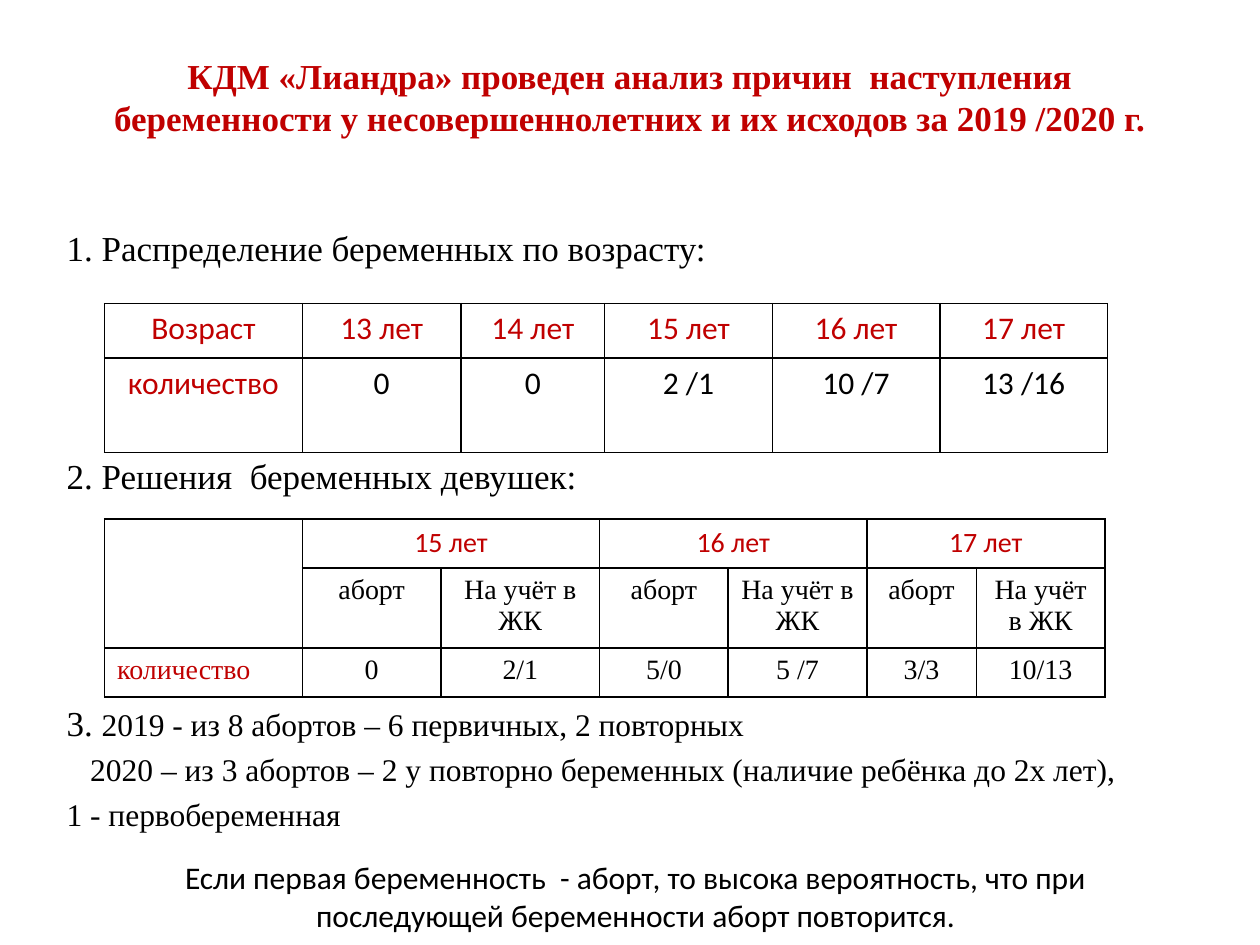
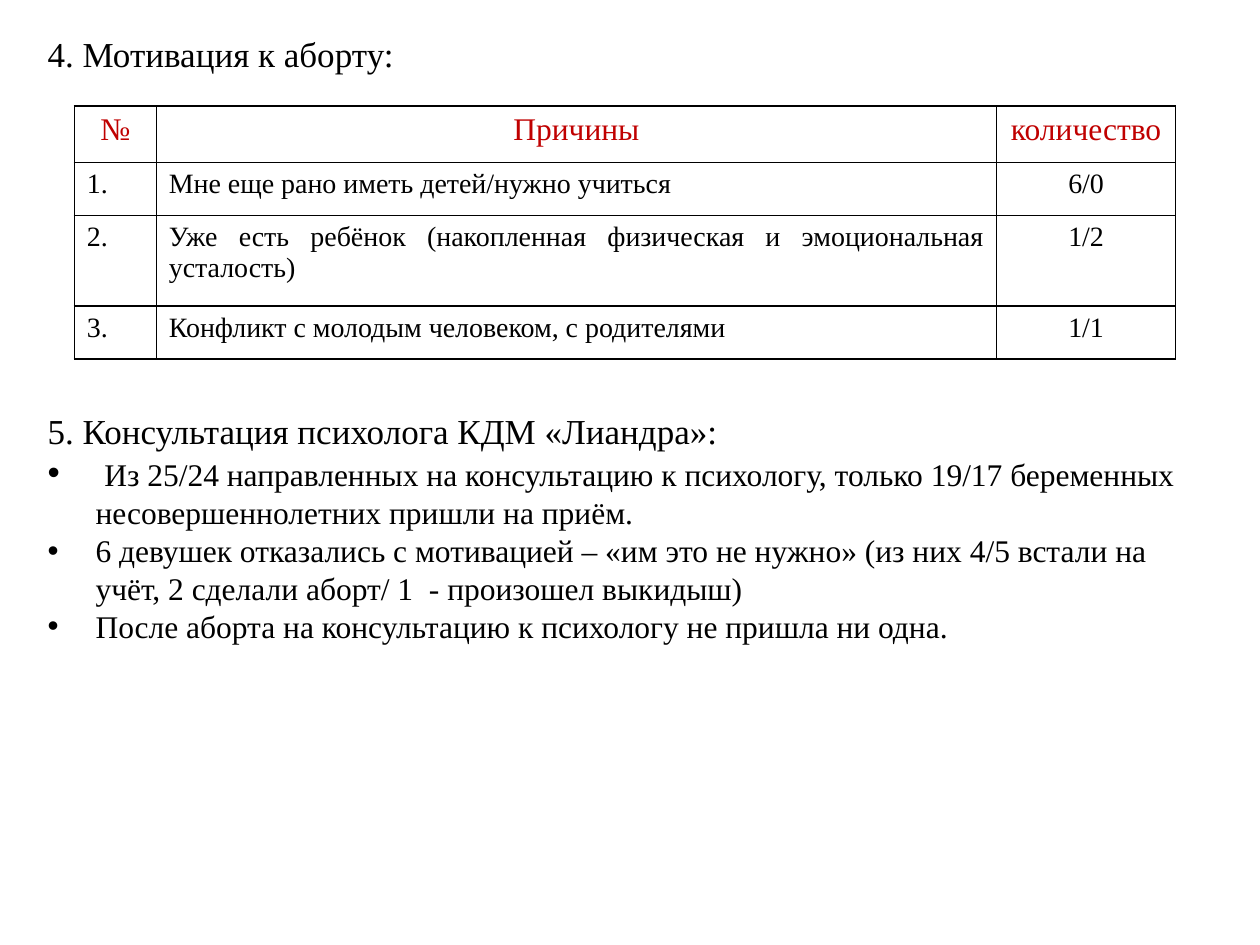
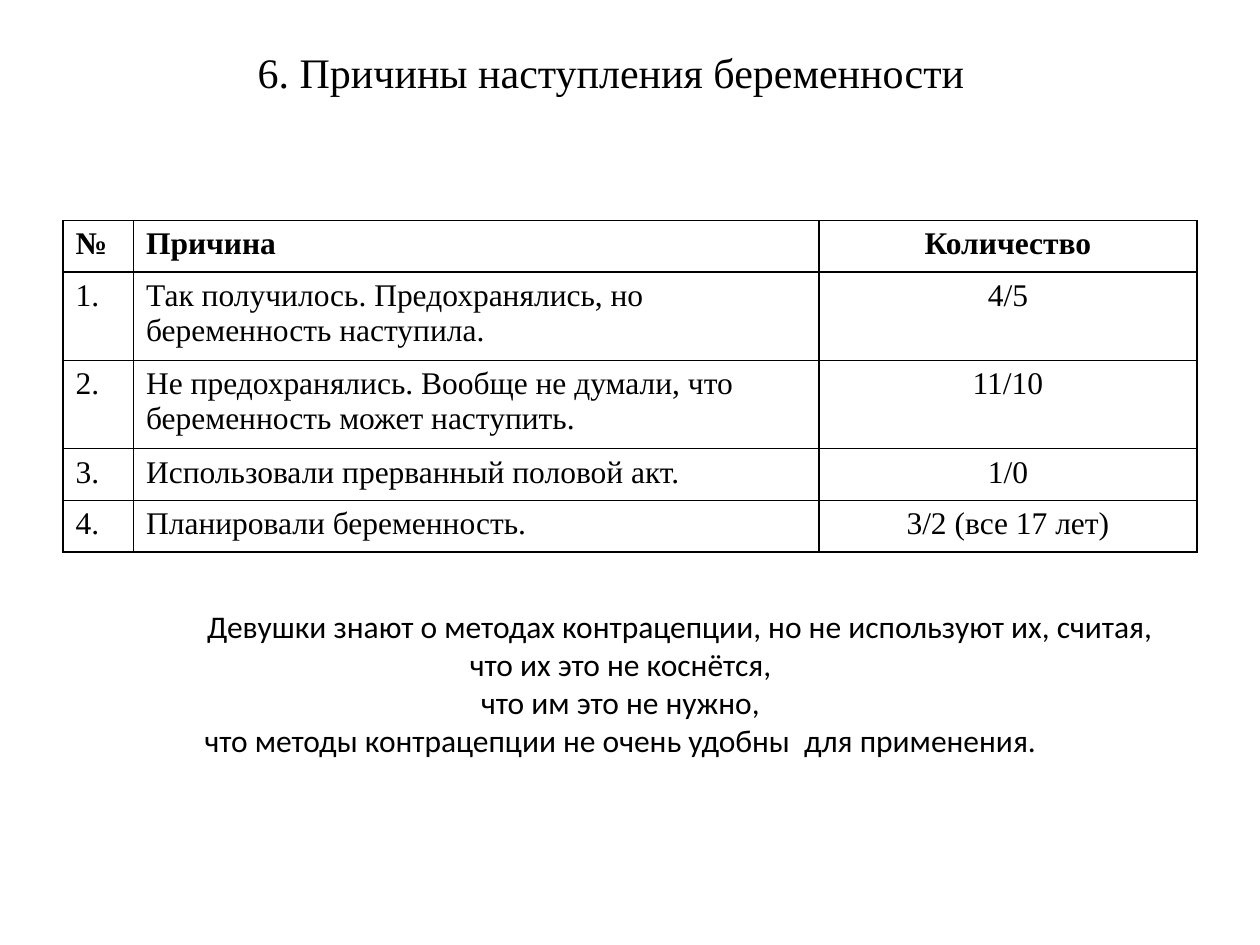
from pptx import Presentation
from pptx.dml.color import RGBColor
from pptx.enum.text import MSO_ANCHOR, PP_ALIGN
from pptx.oxml import parse_xml
from pptx.oxml.ns import nsdecls
from pptx.util import Inches, Pt

LEFT, MID, FULL = PP_ALIGN.LEFT, PP_ALIGN.CENTER, PP_ALIGN.JUSTIFY
TOP, CENTRE = MSO_ANCHOR.TOP, MSO_ANCHOR.MIDDLE
COLOURS = {"ink": "000000", "red": "C00000", "paper": "FFFFFF"}
SERIF, SANS = "Times New Roman", "Calibri"
COLS, ROWS = 100, 75
GAP = 4  # points before a body paragraph
HANG = 3.8


def tint(name):
    return RGBColor.from_string(COLOURS[name])


class Deck:
    def __init__(self):
        self.prs = Presentation()
        self.prs.slide_width, self.prs.slide_height = Inches(10), Inches(7.5)
        self.slide = None

    def page(self):
        self.slide = self.prs.slides.add_slide(self.prs.slide_layouts[6])

    def col(self, n):
        return round(self.prs.slide_width * n / COLS)

    def row(self, n):
        return round(self.prs.slide_height * n / ROWS)

    def place(self, box):
        x, y, w, h = box
        return self.col(x), self.row(y), self.col(w), self.row(h)

    def style(self, run, size, colour="ink", font=SERIF, bold=False):
        run.font.size, run.font.name, run.font.bold = Pt(size), font, bold
        run.font.color.rgb = tint(colour)

    def text(self, box, lines, anchor=TOP, foot=0.5, **look):
        """Add a text box; each line is a dict of its runs and spacing."""
        frame = self.slide.shapes.add_textbox(*self.place(box)).text_frame
        frame.word_wrap, frame.vertical_anchor = True, anchor
        frame.margin_bottom = self.row(foot)
        for i, line in enumerate(lines):
            para = frame.add_paragraph() if i else frame.paragraphs[0]
            self.fill(para, line, look)

    def fill(self, para, line, look):
        para.alignment = line.get("align", LEFT)
        para.space_before = Pt(line.get("gap", 0))
        for words, size in line["runs"]:
            run = para.add_run()
            run.text = words
            self.style(run, size, **look)
        props = para._p.get_or_add_pPr()
        props.set("marL", str(self.col(line.get("left", 0))))
        props.set("indent", str(self.col(line.get("first", 0))))
        if line.get("dot"):
            props.append(parse_xml(f'<a:buFont {nsdecls("a")} typeface="Arial"/>'))
            props.append(parse_xml(f'<a:buChar {nsdecls("a")} char="•"/>'))

    def rule(self, cell):
        props = cell._tc.get_or_add_tcPr()
        for side in "LRTB":
            props.append(parse_xml(
                f'<a:ln{side} {nsdecls("a")} w="{Pt(1)}"><a:solidFill>'
                f'<a:srgbClr val="{COLOURS["ink"]}"/></a:solidFill></a:ln{side}>'))
        cell.fill.solid()
        cell.fill.fore_color.rgb = tint("paper")

    def table(self, x, y, widths, heights, data, look, spans=()):
        """Add a ruled table; look(row, col) gives alignment and run style."""
        box = x, y, sum(widths), sum(heights)
        grid = self.slide.shapes.add_table(
            len(heights), len(widths), *self.place(box)).table
        grid.first_row = grid.horz_banding = False
        for part, n in zip(grid.columns, widths):
            part.width = self.col(n)
        for part, n in zip(grid.rows, heights):
            part.height = self.row(n)
        for r, words in enumerate(data):
            for c, word in enumerate(words):
                cell = grid.cell(r, c)
                self.rule(cell)
                if word:
                    cell.text_frame.text = word
                    para = cell.text_frame.paragraphs[0]
                    para.alignment, kind = look(r, c)
                    self.style(para.runs[0], **kind)
        for start, end in spans:
            grid.cell(*start).merge(grid.cell(*end))


def line(words, size=18, **more):
    return {"runs": [(words, size)], **more}


def ages(deck):
    deck.page()
    deck.text((5, 3, 90, 12.5), [line(
        "КДМ «Лиандра» проведен анализ причин  наступления беременности "
        "у несовершеннолетних и их исходов за 2019 /2020 г.", 20, align=MID)],
        CENTRE, foot=3.7, colour="red", bold=True)
    deck.text((4.3, 17.5, 90.7, 53.9), [
        line("1. Распределение беременных по возрасту:", 20, gap=GAP),
        line("2. Решения  беременных девушек:", 20, gap=106),
        {"runs": [("3. ", 20),
                  ("2019 - из 8 абортов – 6 первичных, 2 повторных", 18)],
         "gap": 117},
        line("2020 – из 3 абортов – 2 у повторно беременных "
             "(наличие ребёнка до 2х лет),", gap=GAP, first=1.88),
        line("1 - первобеременная", gap=GAP)])

    def count(r, c):
        red = r == 0 or c == 0
        return MID, dict(size=18, font=SANS, colour="red" if red else "ink")

    deck.table(8.3, 24.1, [15.7, 12.6, 11.4] + [13.3] * 3, [4.3, 7.5], [
        ["Возраст"] + [f"{age} лет" for age in range(13, 18)],
        ["количество", "0", "0", "2 /1", "10 /7", "13 /16"]], count)

    def choice(r, c):
        red = r == 0 or c == 0
        return (MID if c else LEFT), dict(
            size=16, font=SERIF if r else SANS, colour="red" if red else "ink")

    deck.table(8.3, 41.2, [15.7, 11, 12.6, 10.2, 11, 8.7, 10.2], [3.9] * 3, [
        ["", "15 лет", "", "16 лет", "", "17 лет", ""],
        [""] + ["аборт", "На учёт в ЖК"] * 3,
        ["количество", "0", "2/1", "5/0", "5 /7", "3/3", "10/13"]], choice,
        [((0, 0), (1, 0))] + [((0, c), (0, c + 1)) for c in (1, 3, 5)])
    deck.text((8.3, 67.6, 84.3, 7.1), [line(
        "Если первая беременность  - аборт, то высока вероятность, что при "
        "последующей беременности аборт повторится.", align=MID)], font=SANS)


def motives(deck):
    deck.page()
    deck.text((2.8, 2.1, 92.2, 64.9),
              [line("4. Мотивация к аборту:", 20, gap=GAP)])

    def look(r, c):
        if r == 0:
            return MID, dict(size=18, colour="red")
        return (MID if c == 2 else FULL), dict(size=16)

    deck.table(5.9, 8.4, [6.5, 66.7, 14.2], [4.5, 4.2, 7.2, 4.2], [
        ["№", "Причины", "количество"],
        ["1.", "Мне еще рано иметь детей/нужно учиться", "6/0"],
        ["2.", "Уже есть ребёнок (накопленная физическая и эмоциональная "
               "усталость)", "1/2"],
        ["3.", "Конфликт с молодым человеком, с родителями", "1/1"]], look)
    item = dict(left=HANG, first=-HANG, dot=True)
    deck.text((2.8, 32, 92.9, 19.9), [
        line("5. Консультация психолога КДМ «Лиандра»:", 20),
        {"runs": [(" ", 20),
                  ("Из 25/24 направленных на консультацию к психологу, только "
                   "19/17 беременных несовершеннолетних пришли на приём.", 18)],
         **item},
        line("6 девушек отказались с мотивацией – «им это не нужно» (из них 4/5 "
             "встали на учёт, 2 сделали аборт/ 1  - произошел выкидыш)", **item),
        line("После аборта на консультацию к психологу не пришла ни одна.",
             **item)])


def causes(deck):
    deck.page()
    deck.text((2, 3, 93, 5.4), [line(
        "6. Причины наступления беременности", 24, align=MID)], CENTRE)

    def look(r, c):
        return (MID if c == 2 else LEFT), dict(size=18, bold=r == 0)

    deck.table(5, 17.5, [5.6, 54.4, 30], [4.1] * 5, [
        ["№", "Причина", "Количество"],
        ["1.", "Так получилось. Предохранялись, но беременность наступила.",
         "4/5"],
        ["2.", "Не предохранялись. Вообще не думали, что беременность может "
               "наступить.", "11/10"],
        ["3.", "Использовали прерванный половой акт.", "1/0"],
        ["4.", "Планировали беременность.", "3/2 (все 17 лет)"]], look)
    deck.text((2.8, 47.7, 92.9, 13.1), [
        line("Девушки знают о методах контрацепции, но не используют их, считая,",
             align=MID, left=9.4),
        line("что их это не коснётся,", align=MID),
        line("что им это не нужно,", align=MID),
        line("что методы контрацепции не очень удобны  для применения.",
             align=MID)], font=SANS)


def main():
    deck = Deck()
    for build in (ages, motives, causes):
        build(deck)
    deck.prs.save("out.pptx")


if __name__ == "__main__":
    main()
